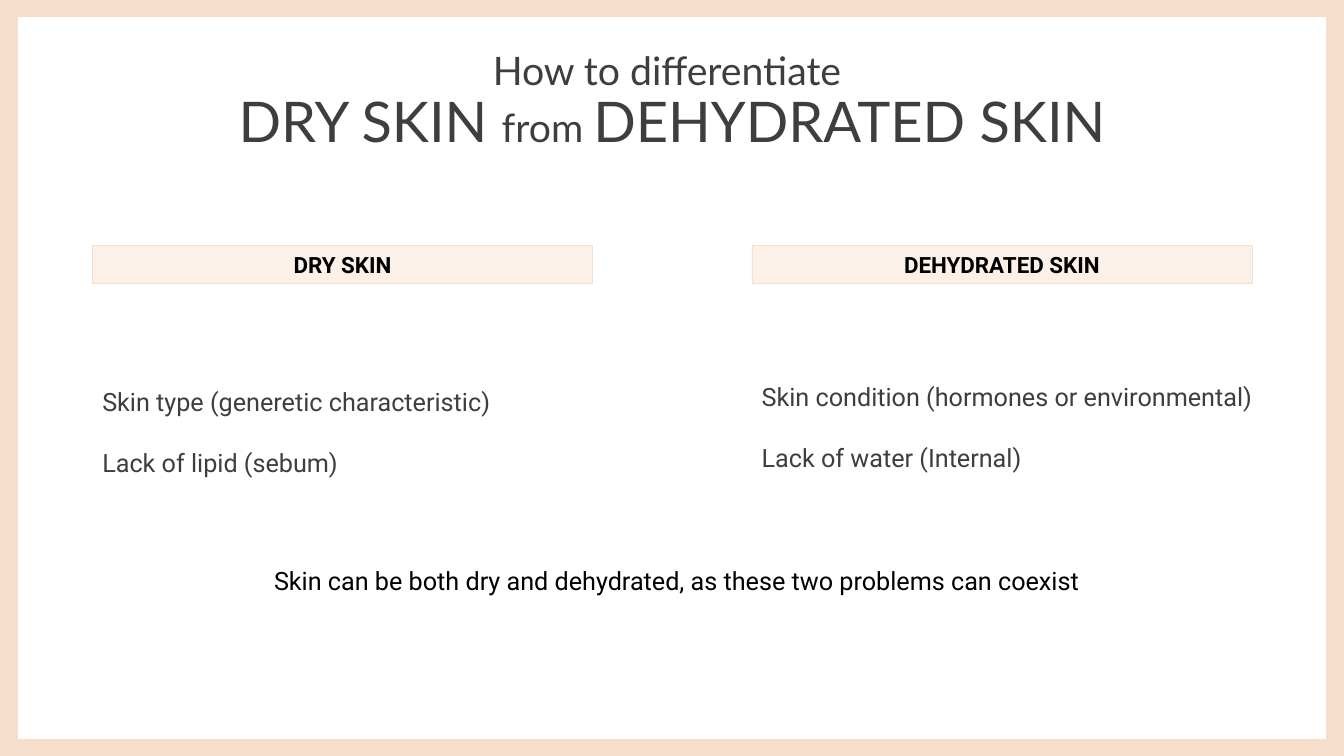
from pptx import Presentation
from pptx.dml.color import RGBColor
from pptx.enum.shapes import MSO_SHAPE as Shape
from pptx.enum.text import MSO_ANCHOR as Anchor, PP_ALIGN as Align
from pptx.util import Pt

COLORS = {"frame": "F7DECA", "label": "FCF1E8", "gray": "3E3E3E", "black": "000000"}
WIDTH, HEIGHT = 960, 540
FRAME_X, FRAME_Y = 12.8, 12.2
MARGIN = 66


class SkinSlide:
    def __init__(self, slide):
        self.slide = slide

    def color(self, name):
        return RGBColor.from_string(COLORS[name])

    def rectangle(self, left, top, width, height, fill, line=None):
        box = self.slide.shapes.add_shape(
            Shape.RECTANGLE, Pt(left), Pt(top), Pt(width), Pt(height))
        box.shadow.inherit = False
        box.fill.solid()
        box.fill.fore_color.rgb = self.color(fill)
        if line:
            box.line.color.rgb = self.color(line)
            box.line.width = Pt(0.25)
        else:
            box.line.fill.background()
        return box

    def add_lines(self, frame, lines, font, color, align=Align.LEFT, bold=False,
                  gap=0, line_spacing=1.0):
        """Fill a text frame; each line is a list of (words, size) runs."""
        frame.word_wrap = True
        for index, runs in enumerate(lines):
            paragraph = frame.add_paragraph() if index else frame.paragraphs[0]
            paragraph.alignment = align
            paragraph.line_spacing = line_spacing
            if index:
                paragraph.space_before = Pt(gap)
            for words, size in runs:
                run = paragraph.add_run()
                run.text = words
                run.font.name = font
                run.font.size = Pt(size)
                run.font.bold = bold
                run.font.color.rgb = self.color(color)

    def text(self, left, top, width, height, lines, font="Roboto", color="gray",
             anchor=Anchor.TOP, inset=3.6, **style):
        box = self.slide.shapes.add_textbox(Pt(left), Pt(top), Pt(width), Pt(height))
        box.text_frame.vertical_anchor = anchor
        box.text_frame.margin_top = Pt(inset)
        self.add_lines(box.text_frame, lines, font, color, **style)

    def label(self, left, words):
        box = self.rectangle(left, 175.4, 357.4, 26.8, "label", "frame")
        box.text_frame.vertical_anchor = Anchor.MIDDLE
        self.add_lines(box.text_frame, [[(words, 16)]], "Roboto", "black",
                       align=Align.CENTER, bold=True)

    def border(self):
        for top in (0, HEIGHT - FRAME_Y):
            self.rectangle(0, top, WIDTH, FRAME_Y, "frame")
        for left in (0, WIDTH - FRAME_X):
            self.rectangle(left, 0, FRAME_X, HEIGHT, "frame")


def main():
    deck = Presentation()
    deck.slide_width, deck.slide_height = Pt(WIDTH), Pt(HEIGHT)
    page = SkinSlide(deck.slides.add_slide(deck.slide_layouts[6]))

    page.border()
    page.text(MARGIN, 42.5, WIDTH - 2 * MARGIN, 62.6, [
        [("How to differentiate ", 28)],
        [("DRY SKIN ", 40), ("from ", 28), ("DEHYDRATED SKIN", 40)],
    ], font="Lato", anchor=Anchor.MIDDLE, align=Align.CENTER, line_spacing=0.9)

    columns = [
        (MARGIN, "DRY SKIN", 244, 404, 167,
         ["Skin type (generetic characteristic)", "Lack of lipid (sebum)"]),
        (537, "DEHYDRATED SKIN", 240.5, 402, 101.5,
         ["Skin condition (hormones or environmental)", "Lack of water (Internal)"]),
    ]
    for left, heading, top, width, height, traits in columns:
        page.label(left, heading)
        page.text(left, top, width, height, [[(trait, 18)] for trait in traits],
                  inset=32, gap=22)

    page.text(107.3, 400.3, 752.4, 28.8, [
        [("Skin can be both dry and dehydrated, as these two problems can coexist", 18)],
    ], color="black", align=Align.CENTER)

    deck.save("out.pptx")


if __name__ == "__main__":
    main()
